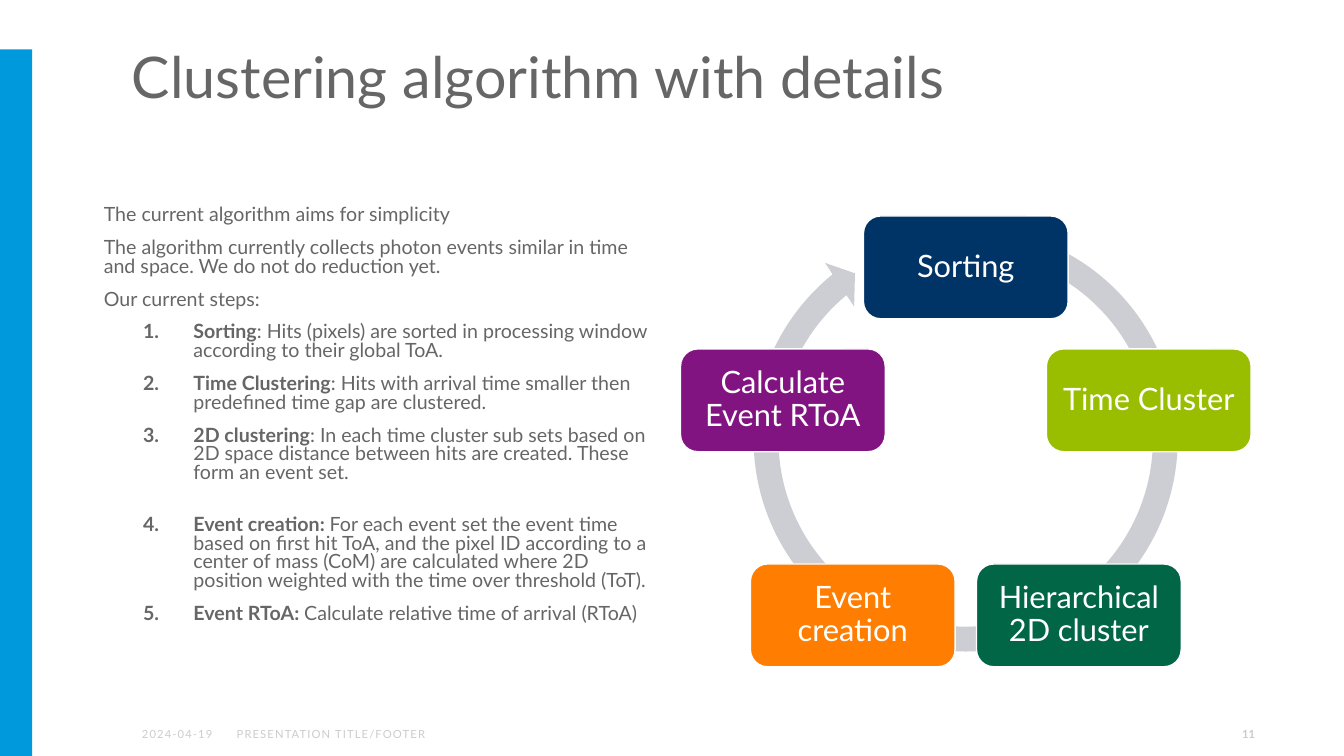
"""Build the slide on the clustering algorithm and its cycle of steps."""
from math import cos, radians, sin

from lxml import etree
from pptx import Presentation
from pptx.dml.color import RGBColor
from pptx.enum.shapes import MSO_SHAPE
from pptx.enum.text import MSO_ANCHOR, PP_ALIGN
from pptx.oxml.ns import qn
from pptx.util import Pt

RECTANGLE = MSO_SHAPE.RECTANGLE
ROUNDED = MSO_SHAPE.ROUNDED_RECTANGLE
CIRCULAR_ARROW = MSO_SHAPE.CIRCULAR_ARROW
TOP, MIDDLE = MSO_ANCHOR.TOP, MSO_ANCHOR.MIDDLE
LEFT, CENTER, RIGHT = PP_ALIGN.LEFT, PP_ALIGN.CENTER, PP_ALIGN.RIGHT

WHITE = RGBColor(0xFF, 0xFF, 0xFF)
BLUE = RGBColor(0x00, 0x99, 0xDC)
GREY = RGBColor(0x66, 0x66, 0x66)
PALE = RGBColor(0xCC, 0xCC, 0xCC)
RING = RGBColor(0xCC, 0xCE, 0xD3)
NAVY = RGBColor(0x00, 0x33, 0x66)
LIME = RGBColor(0x99, 0xBE, 0x00)
GREEN = RGBColor(0x00, 0x66, 0x46)
ORANGE = RGBColor(0xFF, 0x7D, 0x00)
PURPLE = RGBColor(0x82, 0x14, 0x82)

INTRO = [
    "The current algorithm aims for simplicity",
    "The algorithm currently collects photon events similar in time and space. "
    "We do not do reduction yet.",
    "Our current steps:",
]
STEPS = [
    ("Sorting", ": Hits (pixels) are sorted in processing window according to "
     "their global ToA.", 10),
    ("Time Clustering", ": Hits with arrival time smaller then predefined time "
     "gap are clustered.", 10),
    ("2D clustering", ": In each time cluster sub sets based on 2D space distance "
     "between hits are created. These form an event set.", 10),
    ("Event creation: ", "For each event set the event time based on first hit "
     "ToA, and the pixel ID according to a center of mass (CoM) are calculated "
     "where 2D position weighted with the time over threshold (ToT).", 23.4),
    ("Event RToA: ", "Calculate relative time of arrival (RToA)", 10),
]
CYCLE = [
    ("Sorting", NAVY),
    ("Time Cluster", LIME),
    ("Hierarchical 2D cluster", GREEN),
    ("Event creation", ORANGE),
    ("Calculate Event RToA", PURPLE),
]
CYCLE_X, CYCLE_Y, CYCLE_RADIUS = 689.9, 328.4, 137.4
NODE_WIDTH, NODE_HEIGHT = 146.2, 73.4


def add_span(para, text, size=14, color=GREY, bold=False, tracking=None):
    """Append a formatted run of text to a paragraph."""
    span = para.add_run()
    span.text = text
    span.font.name = "Lato"
    span.font.size = Pt(size)
    span.font.bold = bold
    span.font.color.rgb = color
    if tracking:
        span._r.get_or_add_rPr().set("spc", str(tracking))


class SlideBuilder:
    """Hold the current slide and draw its elements in one style."""

    def __init__(self, page):
        self.page = page

    def shape(self, kind, left, top, width, height, fill, line=None):
        """Draw a filled preset shape."""
        shape = self.page.shapes.add_shape(
            kind, Pt(left), Pt(top), Pt(width), Pt(height))
        shape.shadow.inherit = False
        shape.fill.solid()
        shape.fill.fore_color.rgb = fill
        if line is None:
            shape.line.fill.background()
        else:
            shape.line.color.rgb = line
            shape.line.width = Pt(1)
        return shape

    def frame(self, shape, insets=(7.2, 3.6, 7.2, 3.6), anchor=TOP):
        """Set the wrapping, insets and anchor of a shape's text."""
        frame = shape.text_frame
        frame.word_wrap = True
        frame.vertical_anchor = anchor
        (frame.margin_left, frame.margin_top,
         frame.margin_right, frame.margin_bottom) = map(Pt, insets)
        return frame

    def text_box(self, left, top, width, height, **options):
        """Add an empty text box and return its text frame."""
        box = self.page.shapes.add_textbox(
            Pt(left), Pt(top), Pt(width), Pt(height))
        return self.frame(box, **options)

    def label(self, frame, text, align=LEFT, spacing=1.0, **style):
        """Fill a text frame with one paragraph."""
        para = frame.paragraphs[0]
        para.alignment = align
        para.line_spacing = spacing
        add_span(para, text, **style)

    def body(self, left, top, width, height):
        """Write the introduction and the numbered steps."""
        frame = self.text_box(left, top, width, height,
                              insets=(0, 3.6, 1.4, 3.6))
        for index, text in enumerate(INTRO):
            para = frame.paragraphs[0] if index == 0 else frame.add_paragraph()
            para._p.get_or_add_pPr().set("marL", str(Pt(8)))
            para.line_spacing = 0.8
            para.space_before = Pt(10 if index else 0)
            add_span(para, text)
        for name, text, gap in STEPS:
            para = frame.add_paragraph()
            para.level = 1
            para.line_spacing = 0.8
            para.space_before = Pt(gap)
            properties = para._p.get_or_add_pPr()
            properties.set("marL", str(Pt(72)))
            properties.set("indent", str(Pt(-36)))
            number = etree.SubElement(properties, qn("a:buAutoNum"))
            number.set("type", "arabicPeriod")
            add_span(para, name, bold=True)
            add_span(para, text)

    def cycle(self):
        """Draw the circular arrow and the steps spaced evenly around it."""
        arrow = self.shape(CIRCULAR_ARROW, 528.5, 152.6, 322.6, 322.6, RING)
        for index, value in enumerate((0.055, 3.307, 138.49, 173.417, 0.058)):
            arrow.adjustments[index] = value
        for index, (text, fill) in enumerate(CYCLE):
            angle = radians(index * 360 / len(CYCLE))
            left = CYCLE_X + CYCLE_RADIUS * sin(angle) - NODE_WIDTH / 2
            top = CYCLE_Y - CYCLE_RADIUS * cos(angle) - NODE_HEIGHT / 2
            node = self.shape(ROUNDED, left, top, NODE_WIDTH, NODE_HEIGHT,
                              fill, line=WHITE)
            frame = self.frame(node, insets=(6.5,) * 4, anchor=MIDDLE)
            self.label(frame, text, align=CENTER, spacing=0.9, size=22,
                       color=WHITE)


def main():
    """Create the deck and save it."""
    deck = Presentation()
    deck.slide_width, deck.slide_height = Pt(960), Pt(540)
    builder = SlideBuilder(deck.slides.add_slide(deck.slide_layouts[6]))

    builder.shape(RECTANGLE, 0, 35.3, 23, 504.7, BLUE)
    for text, left, width, style in (
        ("PRESENTATION TITLE/FOOTER", 162, 340, {"tracking": 80}),
        ("11", 687.6, 216, {"align": RIGHT, "bold": True}),
        ("2024-04-19", 94.3, 65.5, {"tracking": 80}),
    ):
        frame = builder.text_box(left, 509.8, width, 28.8, anchor=MIDDLE)
        builder.label(frame, text, size=8, color=PALE, **style)

    title = builder.text_box(87.1, 31.7, 746.6, 51.8,
                             insets=(7.2, 3.6, 7.2, 1.4))
    builder.label(title, "Clustering algorithm with details", spacing=0.9,
                  size=41)
    builder.body(66.2, 144, 408.2, 342.7)
    builder.cycle()
    deck.save("out.pptx")


if __name__ == "__main__":
    main()
